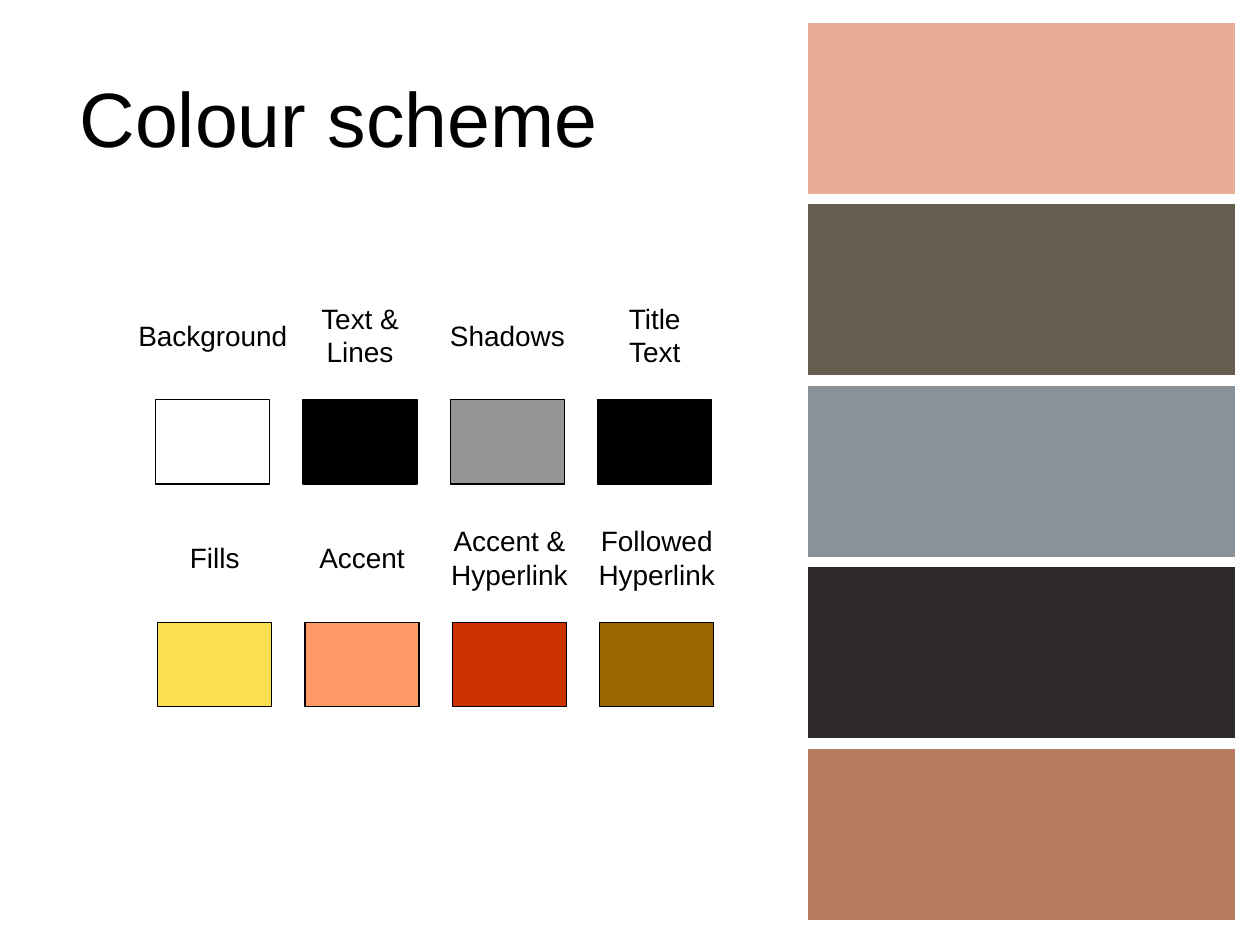
from pptx import Presentation
from pptx import util as u
from pptx.dml.color import RGBColor
from pptx.enum import shapes, text

FONT = "Arial"
HUES = {
    "black": "000000", "white": "FFFFFF", "grey": "969696",
    "yellow": "FBDF53", "orange": "FF9966", "red": "CC3300", "brown": "996600",
    "peach": "E7AE95", "olive": "665D4E", "slate": "899299",
    "dark": "2E2828", "clay": "B47B5E",
}
BANDS = ["peach", "olive", "slate", "dark", "clay"]

# Each row: left, top, then (label, label width, fill) per swatch.
# "\n" starts a paragraph, "\v" breaks a line.
ROWS = [
    (3.14, 8.06, [("Background", 3.55, "white"), ("Text &\nLines", 2.15, "black"),
                  ("Shadows", 2.85, "grey"), ("Title\vText", 1.65, "black")]),
    (3.18, 12.55, [("Fills", 1.55, "yellow"), ("Accent", 2.28, "orange"),
                   ("Accent &\nHyperlink", 2.9, "red"),
                   ("Followed\nHyperlink", 2.9, "brown")]),
]
PITCH, WIDE, HIGH = 2.97, 2.3, 1.7
RISE = 1.3  # from label centre down to swatch top


def hue(name):
    return RGBColor.from_string(HUES[name])


def add_box(slide, left, top, wide, high, fill, line, weight):
    box = slide.shapes.add_shape(shapes.MSO_SHAPE.RECTANGLE,
                                 u.Cm(left), u.Cm(top), u.Cm(wide), u.Cm(high))
    box.shadow.inherit = False
    box.fill.solid()
    box.fill.fore_color.rgb = hue(fill)
    box.line.color.rgb = hue(line)
    box.line.width = u.Pt(weight)


def style(para, size, align):
    para.alignment = align
    para.font.name = FONT
    para.font.size = u.Pt(size)
    para.font.color.rgb = hue("black")


def add_label(slide, words, mid_x, mid_y, wide):
    high = 1.63 if len(words.splitlines()) > 1 else 0.94
    box = slide.shapes.add_textbox(u.Cm(mid_x - wide / 2), u.Cm(mid_y - high / 2),
                                   u.Cm(wide), u.Cm(high))
    frame = box.text_frame
    frame.text = words
    frame.word_wrap = False
    frame.auto_size = text.MSO_AUTO_SIZE.SHAPE_TO_FIT_TEXT
    for para in frame.paragraphs:
        style(para, 16, text.PP_ALIGN.CENTER)


def set_title(slide, words):
    title = slide.shapes.title
    title.left, title.top = u.Cm(1.35), u.Cm(0.76)
    title.width, title.height = u.Cm(22.78), u.Cm(3.18)
    frame = title.text_frame
    frame.text = words
    frame.auto_size = text.MSO_AUTO_SIZE.NONE
    frame.vertical_anchor = text.MSO_ANCHOR.MIDDLE
    style(frame.paragraphs[0], 44, text.PP_ALIGN.LEFT)


def main():
    deck = Presentation()
    deck.slide_width, deck.slide_height = u.Cm(25.4), u.Cm(19.05)
    slide = deck.slides.add_slide(deck.slide_layouts[5])

    # Colour bands down the right side
    for i, fill in enumerate(BANDS):
        add_box(slide, 16.19, 0.35 + i * 3.66, 8.81, 3.66, fill, "white", 6)

    set_title(slide, "Colour scheme")

    # Labelled swatches
    for left, top, items in ROWS:
        for i, (words, wide, fill) in enumerate(items):
            x = left + i * PITCH
            add_box(slide, x, top, WIDE, HIGH, fill, "black", 0.75)
            add_label(slide, words, x + WIDE / 2, top - RISE, wide)

    deck.save("out.pptx")


if __name__ == "__main__":
    main()
